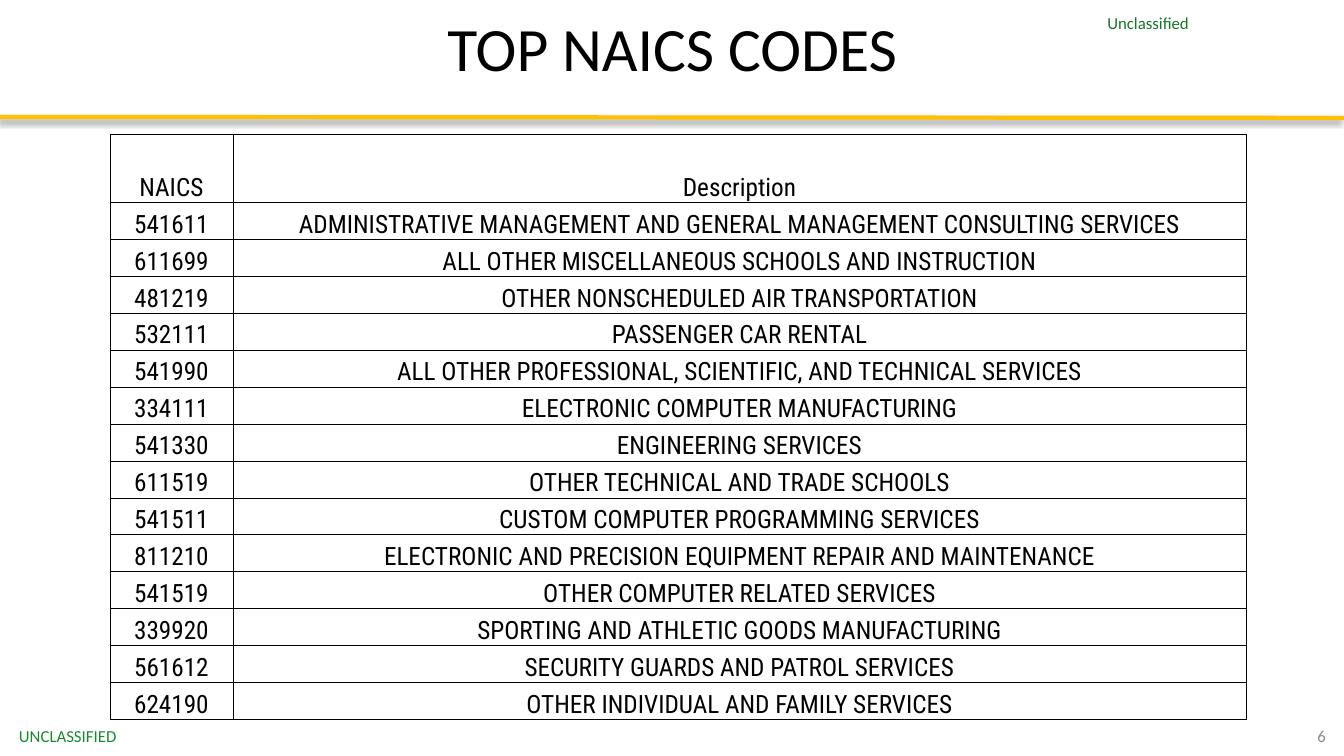
import pptx
import pptx.util
import pptx.dml.color
import pptx.enum.shapes
import pptx.enum.text
import pptx.oxml
import pptx.oxml.ns
from pptx.util import Inches

ALIGN = pptx.enum.text.PP_ALIGN
ANCHOR = pptx.enum.text.MSO_ANCHOR
SPACE = pptx.oxml.ns.nsdecls("a")

CODES = [
    ("NAICS", "Description"),
    ("541611", "ADMINISTRATIVE MANAGEMENT AND GENERAL MANAGEMENT CONSULTING SERVICES"),
    ("611699", "ALL OTHER MISCELLANEOUS SCHOOLS AND INSTRUCTION"),
    ("481219", "OTHER NONSCHEDULED AIR TRANSPORTATION"),
    ("532111", "PASSENGER CAR RENTAL"),
    ("541990", "ALL OTHER PROFESSIONAL, SCIENTIFIC, AND TECHNICAL SERVICES"),
    ("334111", "ELECTRONIC COMPUTER MANUFACTURING"),
    ("541330", "ENGINEERING SERVICES"),
    ("611519", "OTHER TECHNICAL AND TRADE SCHOOLS"),
    ("541511", "CUSTOM COMPUTER PROGRAMMING SERVICES"),
    ("811210", "ELECTRONIC AND PRECISION EQUIPMENT REPAIR AND MAINTENANCE"),
    ("541519", "OTHER COMPUTER RELATED SERVICES"),
    ("339920", "SPORTING AND ATHLETIC GOODS MANUFACTURING"),
    ("561612", "SECURITY GUARDS AND PATROL SERVICES"),
    ("624190", "OTHER INDIVIDUAL AND FAMILY SERVICES"),
]


def paint(target, color):
    target.rgb = pptx.dml.color.RGBColor.from_string(color)


def write(frame, text, size, color, align, face="Calibri"):
    frame.text = text
    line = frame.paragraphs[0]
    line.alignment = align
    line.font.size = pptx.util.Pt(size)
    line.font.name = face
    paint(line.font.color, color)
    return line


def add_label(slide, box, text, color, align):
    frame = slide.shapes.add_textbox(*map(Inches, box)).text_frame
    frame.word_wrap = True
    frame.vertical_anchor = ANCHOR.MIDDLE
    write(frame, text, 12, color, align)


def add_title(slide, box, text):
    title = slide.shapes.title
    title.left, title.top, title.width, title.height = map(Inches, box)
    frame = title.text_frame
    frame.auto_size = pptx.enum.text.MSO_AUTO_SIZE.NONE
    frame.vertical_anchor = ANCHOR.MIDDLE
    write(frame, text, 44, "000000", ALIGN.CENTER).line_spacing = 0.9


def add_rule(slide, box):
    left, top, width, height = box
    rule = slide.shapes.add_connector(
        pptx.enum.shapes.MSO_CONNECTOR.STRAIGHT,
        Inches(left), Inches(top), Inches(left + width), Inches(top + height))
    rule.line.width = pptx.util.Pt(3)
    paint(rule.line.color, "FFC000")
    rule._element.spPr.append(pptx.oxml.parse_xml(
        f'<a:effectLst {SPACE}><a:outerShdw blurRad="50800" dist="38100" '
        'dir="8100000" algn="tr" rotWithShape="0"><a:srgbClr val="000000">'
        '<a:alpha val="40000"/></a:srgbClr></a:outerShdw></a:effectLst>'))


def add_edges(cell, color):
    props = cell._tc.get_or_add_tcPr()
    for spot, side in enumerate(("lnL", "lnR", "lnT", "lnB")):
        props.insert(spot, pptx.oxml.parse_xml(
            f'<a:{side} {SPACE} w="6350"><a:solidFill><a:srgbClr val="{color}"/>'
            f'</a:solidFill></a:{side}>'))


def add_codes(slide, box, rows, first=1.22, head=0.68):
    width, height = box[2:]
    table = slide.shapes.add_table(len(rows), 2, *map(Inches, box)).table
    table.columns[0].width = Inches(first)
    table.columns[1].width = Inches(width - first)
    step = (height - head) / (len(rows) - 1)
    for num, row in enumerate(rows):
        table.rows[num].height = Inches(step if num else head)
        for col, text in enumerate(row):
            cell = table.cell(num, col)
            cell.margin_left = cell.margin_right = cell.margin_top = Inches(0.01)
            cell.margin_bottom = 0
            cell.vertical_anchor = ANCHOR.BOTTOM
            cell.fill.background()
            line = write(cell.text_frame, text, 18, "000000", ALIGN.CENTER, "Roboto Condensed")
            line.font.bold = False
            add_edges(cell, "000000")


def main():
    deck = pptx.Presentation()
    deck.slide_width, deck.slide_height = Inches(13.33), Inches(7.5)
    slide = deck.slides.add_slide(deck.slide_layouts[5])
    add_rule(slide, (0, 1.16, 13.33, 0.01))
    add_label(slide, (10.07, 0.08, 1.82, 0.3), "Unclassified", "167428", ALIGN.RIGHT)
    add_title(slide, (1.67, 0.05, 10, 0.92), "TOP NAICS CODES")
    add_label(slide, (10.58, 7.15, 2.67, 0.3), "6", "8C8C8C", ALIGN.RIGHT)
    add_label(slide, (0.09, 7.15, 2.67, 0.3), "UNCLASSIFIED", "1A882F", ALIGN.LEFT)
    add_codes(slide, (1.09, 1.33, 11.27, 5.81), CODES)
    deck.save("out.pptx")


if __name__ == "__main__":
    main()
